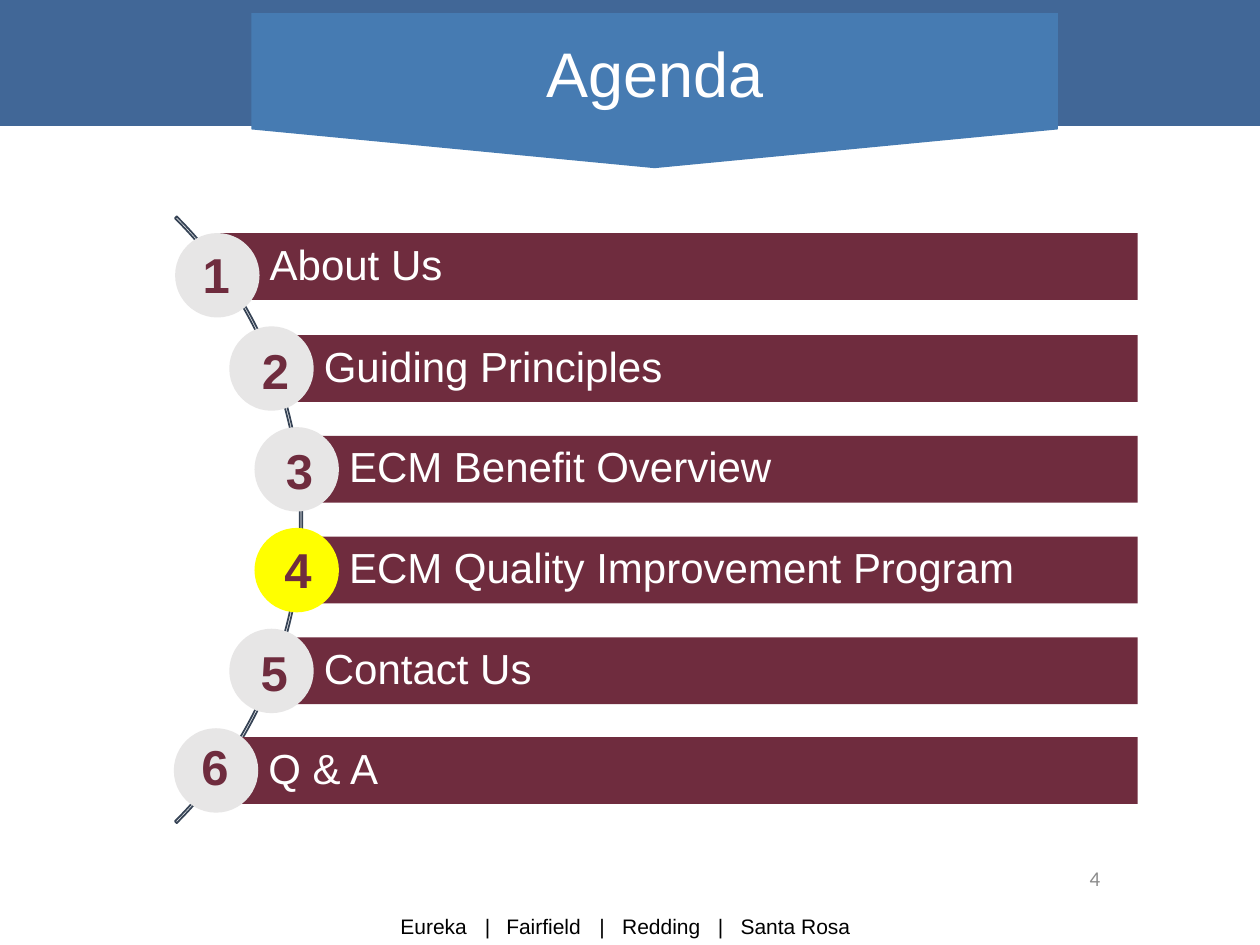
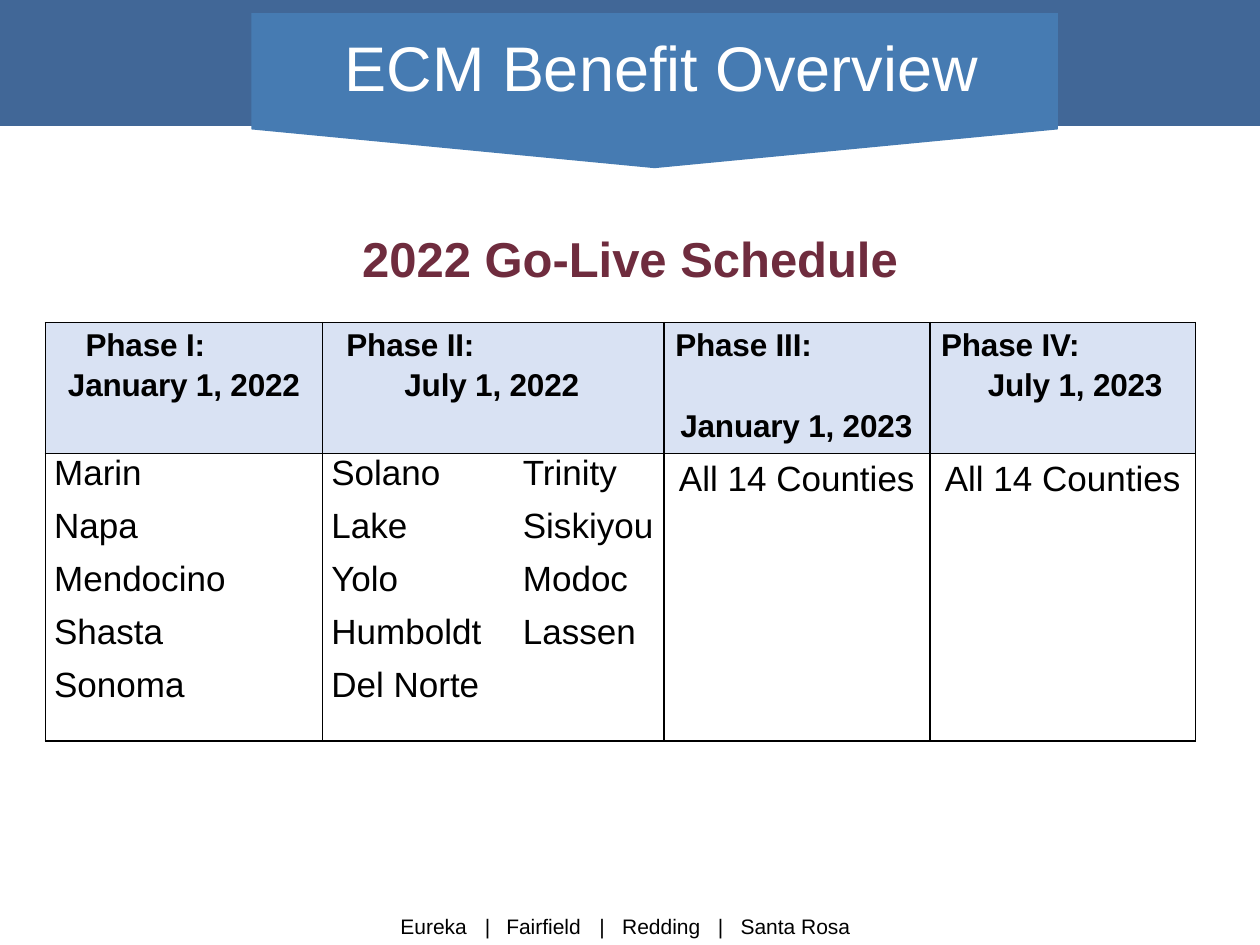
from lxml import etree
from pptx import Presentation
from pptx.dml.color import RGBColor
from pptx.enum import shapes, text
from pptx.oxml import ns
from pptx.util import Inches, Pt

WHITE, BLACK, MAROON = "FFFFFF", "000000", "6F2C3E"
BAND, BANNER, ARC = "416797", "467BB2", "364355"
DISC, CURRENT, HEADER, GREY = "E7E6E6", "FFFF00", "D9E2F3", "8C8C8C"
LEFT, CENTER, RIGHT = text.PP_ALIGN.LEFT, text.PP_ALIGN.CENTER, text.PP_ALIGN.RIGHT
MIDDLE = text.MSO_ANCHOR.MIDDLE

# Label, bar left, bar top, digit offset inside the disc
AGENDA = [
    ("About Us", 1.72, 1.85, 0.12, 0.04),
    ("Guiding Principles", 2.15, 2.66, 0.16, 0.06),
    ("ECM Benefit Overview", 2.35, 3.46, 0.15, 0.06),
    ("ECM Quality Improvement Program", 2.35, 4.26, 0.14, 0.04),
    ("Contact Us", 2.15, 5.06, 0.15, 0.06),
    ("Q & A", 1.71, 5.85, 0.12, 0.02),
]
CURRENT_ITEM = 4

# Phase, its indent, date, its indent, space before the date
PHASES = [
    ("Phase I:", 0.25, "January 1, 2022", 0.11, 0),
    ("Phase II:", 0.12, "July 1, 2022", 0.58, 0),
    ("Phase III:", 0.02, "January 1, 2023", 0.06, 23),
    ("Phase IV:", 0.02, "July 1, 2023", 0.39, 0),
]
COUNTIES = [
    ["Marin", "Napa", "Mendocino", "Shasta", "Sonoma"],
    ["Solano\tTrinity", "Lake\tSiskiyou", "Yolo\tModoc", "Humboldt\tLassen", "Del Norte"],
    ["All 14 Counties"],
    ["All 14 Counties"],
]


def color(value):
    return RGBColor.from_string(value)


def add_child(parent, tag, **attributes):
    return etree.SubElement(parent, ns.qn(tag), attributes)


def set_tabs(para, stops):
    tabs = add_child(para._p.get_or_add_pPr(), "a:tabLst")
    for stop in stops:
        add_child(tabs, "a:tab", pos=str(Inches(stop)), algn="l")


def write(para, words, size, shade, bold=False, align=LEFT, font="Arial"):
    para.alignment = align
    span = para.add_run()
    span.text = words
    span.font.name, span.font.size, span.font.bold = font, Pt(size), bold
    span.font.color.rgb = color(shade)
    return span


def add_text(page, box, words, size, shade, **style):
    frame = page.shapes.add_textbox(*map(Inches, box)).text_frame
    frame.word_wrap = True
    write(frame.paragraphs[0], words, size, shade, **style)
    return frame


def add_shape(page, kind, box, fill):
    shape = page.shapes.add_shape(kind, *map(Inches, box))
    shape.shadow.inherit = False
    shape.line.fill.background()
    if fill:
        shape.fill.solid()
        shape.fill.fore_color.rgb = color(fill)
    else:
        shape.fill.background()
    return shape


def build_layout(page, layout):
    """Put the band, banner and footer on the layout that every page uses."""
    add_shape(page, shapes.MSO_SHAPE.RECTANGLE, (0, 0, 10, 1), BAND)
    banner = add_shape(page, shapes.MSO_SHAPE.PENTAGON, (4.58, -2.48, 1.23, 6.4), BANNER)
    banner.rotation = 90
    banner.adjustments[0] = 0.25
    footer = add_text(page, (3.08, 7.2, 4, 0.3),
                      "Eureka\t|\tFairfield\t|\tRedding\t|\tSanta Rosa", 12, BLACK)
    set_tabs(footer.paragraphs[0], (0.67, 0.84, 1.58, 1.76, 2.52, 2.7))
    for shape in list(page.shapes):
        if not shape.is_placeholder:
            layout.shapes.element.append(shape.element)


def set_title(page, left, top, words):
    title = page.shapes.title
    title.left, title.top, title.width, title.height = map(Inches, (left, top, 6.4, 0.87))
    frame = title.text_frame
    frame.auto_size = text.MSO_AUTO_SIZE.NONE
    frame.vertical_anchor = MIDDLE
    para = frame.paragraphs[0]
    para.line_spacing = 0.9
    write(para, words, 36, WHITE, align=CENTER)


def add_agenda_item(page, number, label, left, top, digit_x, digit_y):
    # Bar with its label
    bar = add_shape(page, shapes.MSO_SHAPE.RECTANGLE, (left, top, 9.03 - left, 0.53), MAROON)
    frame = bar.text_frame
    frame.word_wrap = True
    frame.vertical_anchor = MIDDLE
    frame.margin_left = Inches(0.42)
    frame.margin_right = frame.margin_top = frame.margin_bottom = Inches(0.07)
    frame.paragraphs[0].line_spacing = 0.9
    write(frame.paragraphs[0], label, 24, WHITE)

    # Numbered disc, centred on the left end of the bar
    x, y = left - 0.33, top - (0 if number == 1 else 0.07)
    fill = CURRENT if number == CURRENT_ITEM else DISC
    add_shape(page, shapes.MSO_SHAPE.OVAL, (x, y, 0.67, 0.67), fill)
    add_text(page, (x + digit_x, y + digit_y, 0.5, 0.57), str(number), 28, MAROON, bold=True)


def build_agenda(page):
    set_title(page, 2, 0.18, "Agenda")
    number = add_text(page, (6.58, 6.77, 2.25, 0.4), "4", 12, GREY,
                      align=RIGHT, font="Calibri")
    number.vertical_anchor = MIDDLE

    # Arc behind the discs
    arc = add_shape(page, shapes.MSO_SHAPE.BLOCK_ARC, (-4.41, 0.72, 6.81, 6.81), None)
    for index, value in enumerate((189, 27, 0.003)):
        arc.adjustments[index] = value
    arc.line.color.rgb = color(ARC)
    arc.line.width = Pt(1)

    for number, item in enumerate(AGENDA, 1):
        add_agenda_item(page, number, *item)


def format_cell(cell, fill):
    cell.margin_left = cell.margin_right = Inches(0.07)
    cell.margin_top = cell.margin_bottom = 0
    if fill:
        cell.fill.solid()
        cell.fill.fore_color.rgb = color(fill)
    else:
        cell.fill.background()
    properties = cell._tc.get_or_add_tcPr()
    for index, side in enumerate("LRTB"):
        line = add_child(properties, f"a:ln{side}", w=str(Pt(1)))
        add_child(add_child(line, "a:solidFill"), "a:srgbClr", val=BLACK)
        properties.insert(index, line)


def next_para(frame, index):
    return frame.add_paragraph() if index else frame.paragraphs[0]


def fill_phase(cell, phase, phase_indent, date, date_indent, gap):
    format_cell(cell, HEADER)
    lines = ((phase, phase_indent, 0), (date, date_indent, gap))
    for index, (words, indent, before) in enumerate(lines):
        para = next_para(cell.text_frame, index)
        para._p.get_or_add_pPr().set("marL", str(Inches(indent)))
        para.line_spacing = 1.15
        para.space_before = Pt(before)
        span = write(para, words, 18, BLACK, bold=True)
        span.font._element.set("spc", "-10")


def fill_counties(cell, names):
    format_cell(cell, None)
    single = len(names) == 1
    for index, name in enumerate(names):
        para = next_para(cell.text_frame, index)
        para.line_spacing = 1.15 if single else 1.0
        para.space_before = Pt(4 if index else 0)
        para.space_after = Pt(4)
        if "\t" in name:
            set_tabs(para, [1.52])
        write(para, name, 20, BLACK, align=CENTER if single else LEFT)


def build_schedule(page):
    set_title(page, 2.05, 0.13, "ECM Benefit Overview")
    heading = add_text(page, (0, 1.76, 10, 0.57), "2022 Go-Live Schedule", 28, MAROON,
                       bold=True, align=CENTER)
    heading.vertical_anchor = MIDDLE

    table = page.shapes.add_table(2, 4, *map(Inches, (0.36, 2.56, 9.14, 3.32))).table
    for column, width in zip(table.columns, (2.2, 2.71, 2.11, 2.11)):
        column.width = Inches(width)
    for row, height in zip(table.rows, (1.04, 2.28)):
        row.height = Inches(height)
    for index, (phase, names) in enumerate(zip(PHASES, COUNTIES)):
        fill_phase(table.cell(0, index), *phase)
        fill_counties(table.cell(1, index), names)


def main():
    deck = Presentation()
    deck.slide_width, deck.slide_height = Inches(10), Inches(7.5)
    layout = deck.slide_layouts.get_by_name("Title Only")
    agenda, schedule = (deck.slides.add_slide(layout) for _ in range(2))
    build_layout(agenda, layout)
    build_agenda(agenda)
    build_schedule(schedule)
    deck.save("out.pptx")


if __name__ == "__main__":
    main()
